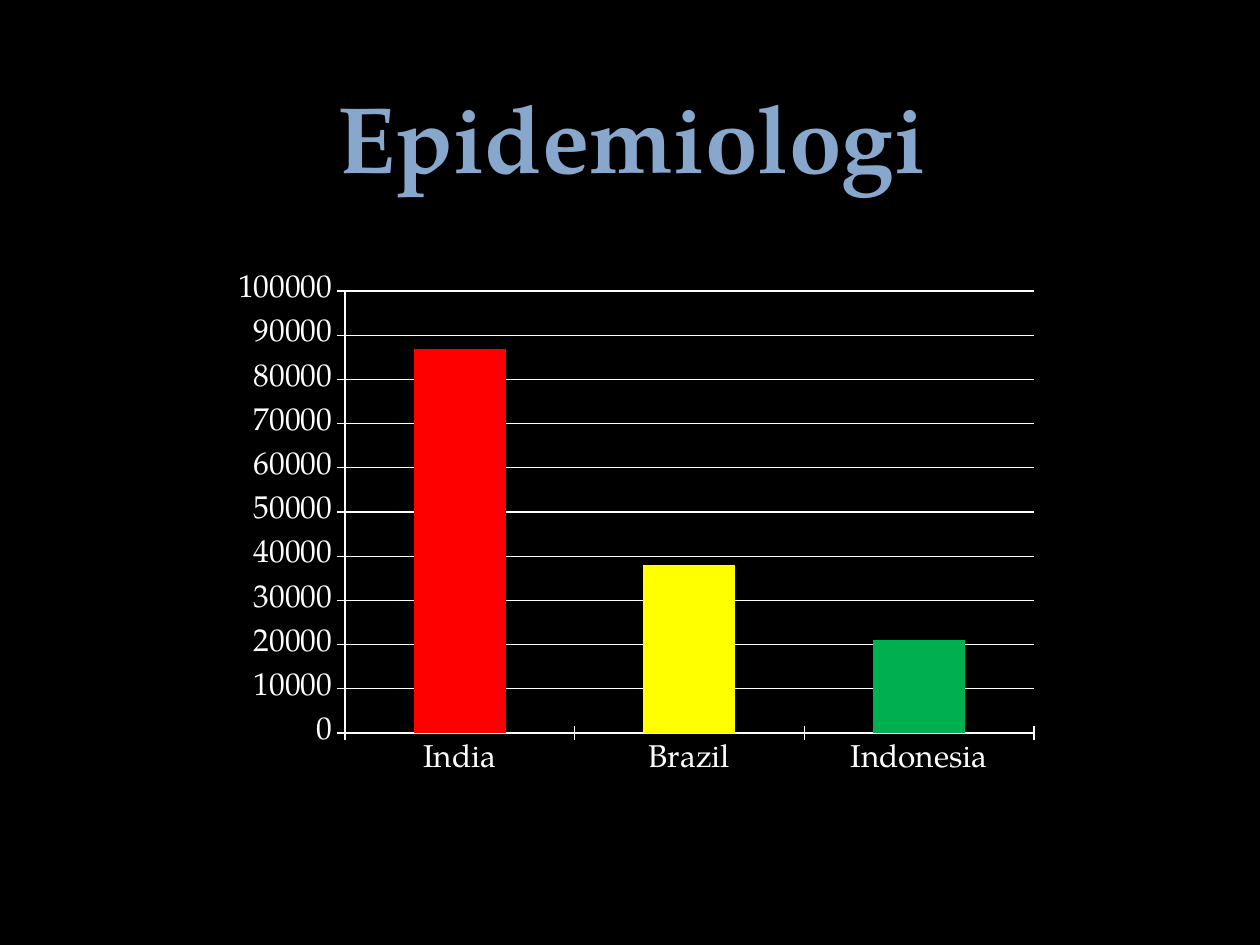
from lxml import etree
from pptx import Presentation
from pptx.chart.data import CategoryChartData
from pptx.dml.color import RGBColor
from pptx.enum.chart import XL_CHART_TYPE, XL_TICK_MARK
from pptx.enum.text import MSO_AUTO_SIZE, PP_ALIGN
from pptx.oxml.ns import qn
from pptx.util import Inches, Pt

STACKED = XL_CHART_TYPE.COLUMN_STACKED
CROSS = XL_TICK_MARK.CROSS
CENTER = PP_ALIGN.CENTER
FIT_SHAPE = MSO_AUTO_SIZE.SHAPE_TO_FIT_TEXT

COLORS = {
    "background": "000000",
    "title": "88A7CD",
    "chart": "FFFFFF",
    "series": "A5B592",
    "India": "FF0000",
    "Brazil": "FFFF00",
    "Indonesia": "00B050",
}
CASES = {"India": 87000, "Brazil": 38000, "Indonesia": 21000}


def color(name):
    return RGBColor.from_string(COLORS[name])


def paint(fill, name):
    fill.solid()
    fill.fore_color.rgb = color(name)


def style_font(font, size, name, family, bold=False):
    font.size = Pt(size)
    font.name = family
    font.bold = bold
    font.color.rgb = color(name)


def write(frame, text, align=CENTER, **style):
    """Put one formatted run into the frame's first paragraph."""
    paragraph = frame.paragraphs[0]
    paragraph.alignment = align
    run = paragraph.add_run()
    run.text = text
    style_font(run.font, **style)


def place_plot(chart, x, y, w, h):
    """Fix the inner plot area, in fractions of the chart's size."""
    plot_area = chart.plots[0]._element.getparent()
    for old in plot_area.findall(qn("c:layout")):
        plot_area.remove(old)
    layout = etree.Element(qn("c:layout"))
    plot_area.insert(0, layout)
    manual = etree.SubElement(layout, qn("c:manualLayout"))
    settings = {"layoutTarget": "inner", "xMode": "edge", "yMode": "edge",
                "x": x, "y": y, "w": w, "h": h}
    for tag, value in settings.items():
        etree.SubElement(manual, qn(f"c:{tag}")).set("val", str(value))


class SlideBuilder:
    """Holds the typeface and the slide being built."""

    def __init__(self, slide, family):
        self.slide = slide
        self.family = family
        paint(slide.background.fill, "background")

    def title(self, text, x, y, w, h):
        box = self.slide.shapes.add_textbox(
            Inches(x), Inches(y), Inches(w), Inches(h))
        frame = box.text_frame
        frame.word_wrap = False
        frame.auto_size = FIT_SHAPE
        write(frame, text, size=54, name="title", family=self.family, bold=True)

    def column_chart(self, values, x, y, w, h):
        data = CategoryChartData()
        data.categories = list(values)
        data.add_series("Series 1", list(values.values()))
        chart = self.slide.shapes.add_chart(
            STACKED, Inches(x), Inches(y), Inches(w), Inches(h), data).chart
        chart.has_legend = False
        chart.has_title = False
        style_font(chart.font, 18, "chart", self.family)

        plot = chart.plots[0]
        plot.vary_by_categories = False
        plot.gap_width = 150
        plot.overlap = 100
        series = plot.series[0]
        paint(series.format.fill, "series")
        for index, category in enumerate(values):
            paint(series.points[index].format.fill, category)

        value_axis = chart.value_axis
        value_axis.minimum_scale = 0
        value_axis.maximum_scale = 100000
        value_axis.major_unit = 10000
        value_axis.has_major_gridlines = True
        for axis in (chart.category_axis, value_axis):
            axis.major_tick_mark = CROSS
        for ruled in (chart.category_axis, value_axis, value_axis.major_gridlines):
            ruled.format.line.color.rgb = color("chart")
            ruled.format.line.width = Pt(0.75)
        place_plot(chart, 0.16, 0.07, 0.82, 0.79)


def main():
    deck = Presentation()
    deck.slide_width, deck.slide_height = Inches(10), Inches(7.5)
    builder = SlideBuilder(
        deck.slides.add_slide(deck.slide_layouts[6]), "TeX Gyre Pagella")
    builder.title("Epidemiologi", 2.5, 0.58, 5.03, 1.01)
    builder.column_chart(CASES, 1.67, 2, 6.67, 4.44)
    deck.save("out.pptx")


if __name__ == "__main__":
    main()
